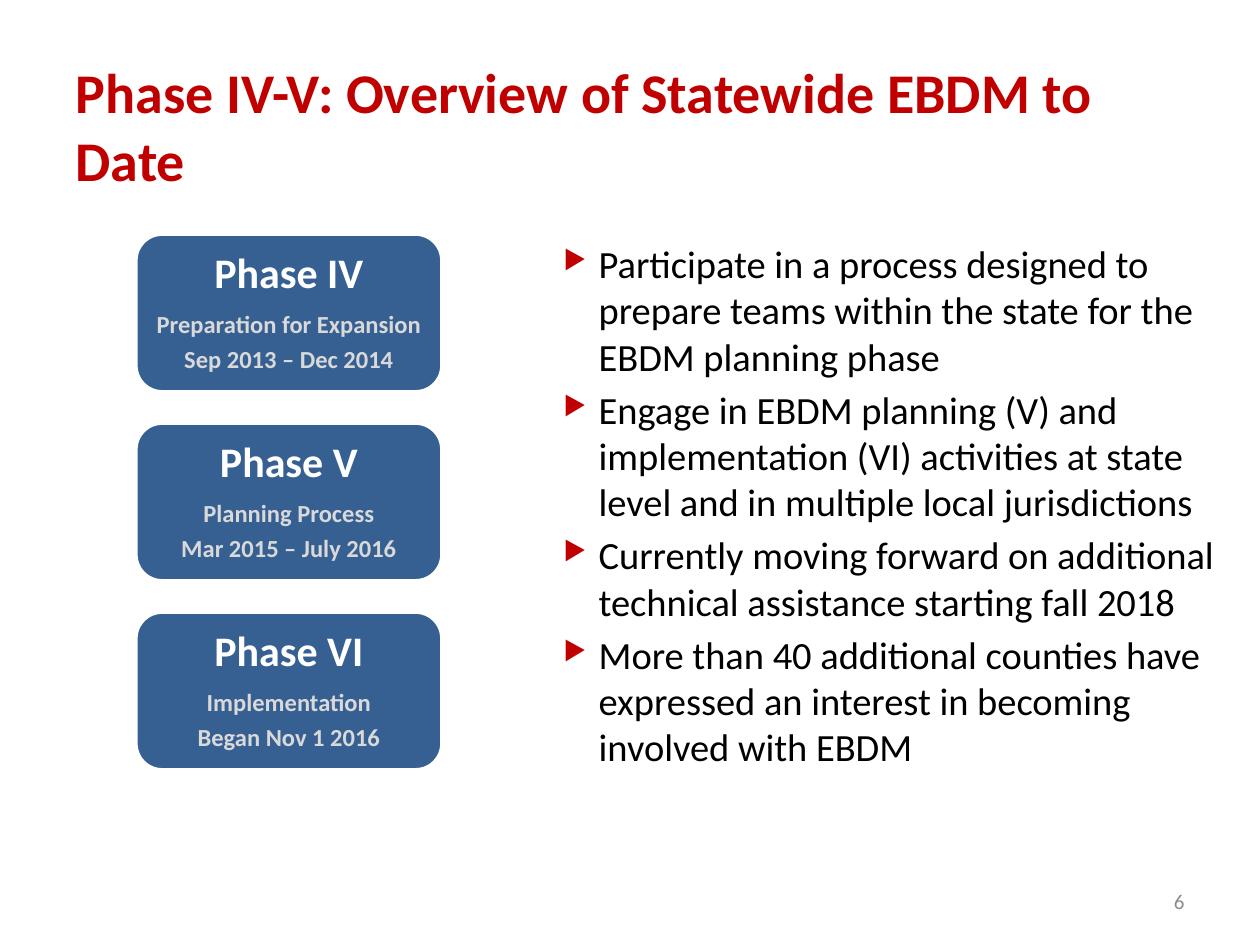
from lxml import etree
from pptx import Presentation
from pptx.dml.color import RGBColor
from pptx.enum.shapes import MSO_SHAPE
from pptx.enum.text import MSO_ANCHOR, MSO_AUTO_SIZE, PP_ALIGN
from pptx.oxml.ns import qn
from pptx.util import Cm, Pt

ROUNDED = MSO_SHAPE.ROUNDED_RECTANGLE
TOP, MIDDLE = MSO_ANCHOR.TOP, MSO_ANCHOR.MIDDLE
LEFT, CENTER, RIGHT = PP_ALIGN.LEFT, PP_ALIGN.CENTER, PP_ALIGN.RIGHT
NO_FIT = MSO_AUTO_SIZE.NONE
TITLE_ONLY = 5

COLOURS = {
    "red": "C00000",
    "blue": "376092",
    "white": "FFFFFF",
    "light": "D9D9D9",
    "black": "000000",
    "grey": "8C8C8C",
}
PHASES = [
    ("Phase IV", "Preparation for Expansion", "Sep 2013 – Dec 2014"),
    ("Phase V", "Planning Process", "Mar 2015 – July 2016"),
    ("Phase VI", "Implementation", "Began Nov 1 2016"),
]
ACTIVITIES = [
    "Participate in a process designed to prepare teams within the state for the EBDM planning phase",
    "Engage in EBDM planning (V) and implementation (VI) activities at state level and in multiple local jurisdictions",
    "Currently moving forward on additional technical assistance starting fall 2018",
    "More than 40 additional counties have expressed an interest in becoming involved with EBDM",
]
CARD_TOP, CARD_PITCH = 4.72, 3.81


class PhaseSlide:
    """Holds the style and the current slide, and adds each kind of element."""

    font = "Calibri"

    def __init__(self, slide):
        self.slide = slide

    def colour(self, name):
        return RGBColor.from_string(COLOURS[name])

    def frame(self, shape, anchor):
        frame = shape.text_frame
        settings = {"word_wrap": True, "auto_size": NO_FIT, "vertical_anchor": anchor}
        for key, value in settings.items():
            setattr(frame, key, value)
        return frame

    def add_text(self, paragraph, text, size, colour, bold=False, **layout):
        for key, value in layout.items():
            setattr(paragraph, key, value)
        run = paragraph.add_run()
        run.text = text
        settings = {"name": self.font, "size": Pt(size), "bold": bold}
        for key, value in settings.items():
            setattr(run.font, key, value)
        run.font.color.rgb = self.colour(colour)

    def paragraphs(self, frame, count):
        return [frame.paragraphs[0]] + [frame.add_paragraph() for _ in range(count - 1)]

    def title(self, text, left, top, width, height):
        title = self.slide.shapes.title
        box = {"left": left, "top": top, "width": width, "height": height}
        for key, value in box.items():
            setattr(title, key, Cm(value))
        frame = self.frame(title, TOP)
        self.add_text(frame.paragraphs[0], text, 32, "red", True, alignment=LEFT)

    def textbox(self, box, anchor):
        return self.frame(self.slide.shapes.add_textbox(*map(Cm, box)), anchor)

    def bullet(self, paragraph):
        properties = paragraph._p.get_or_add_pPr()
        properties.set("marL", str(Cm(1.02)))
        properties.set("indent", str(Cm(-0.71)))
        bullet_colour = etree.SubElement(properties, qn("a:buClr"))
        etree.SubElement(bullet_colour, qn("a:srgbClr"), val=COLOURS["red"])
        etree.SubElement(properties, qn("a:buSzPct"), val="68000")
        etree.SubElement(properties, qn("a:buChar"), char="▶")

    def bullets(self, items, *box):
        frame = self.textbox(box, TOP)
        for index, paragraph in enumerate(self.paragraphs(frame, len(items))):
            self.bullet(paragraph)
            gap = Pt(4) if index else None
            self.add_text(paragraph, items[index], 22, "black", space_before=gap)

    def card(self, lines, *box):
        card = self.slide.shapes.add_shape(ROUNDED, *map(Cm, box))
        card.shadow.inherit = False
        card.fill.solid()
        card.fill.fore_color.rgb = self.colour("blue")
        card.line.color.rgb = self.colour("white")
        card.line.width = Pt(2)
        frame = self.frame(card, MIDDLE)
        frame.margin_left = frame.margin_right = Cm(0.15)
        for index, paragraph in enumerate(self.paragraphs(frame, len(lines))):
            size, colour = (14, "light") if index else (24, "white")
            self.add_text(paragraph, lines[index], size, colour, True, alignment=CENTER,
                          line_spacing=0.9, space_after=Pt(size * 0.35))

    def page_number(self, number, *box):
        frame = self.textbox(box, MIDDLE)
        self.add_text(frame.paragraphs[0], number, 12, "grey", alignment=RIGHT)


def main():
    presentation = Presentation()
    presentation.slide_width, presentation.slide_height = Cm(25.4), Cm(19.05)
    layout = presentation.slide_layouts[TITLE_ONLY]
    page = PhaseSlide(presentation.slides.add_slide(layout))
    page.title("Phase IV-V: Overview of Statewide EBDM to Date", 1.27, 1.04, 22.86, 2.46)
    page.bullets(ACTIVITIES, 10.8, 4.72, 14.17, 11.23)
    for row, phase in enumerate(PHASES):
        page.card(phase, 2.74, CARD_TOP + row * CARD_PITCH, 6.17, 3.18)
    page.page_number("6", 18.21, 17.65, 5.92, 1.02)
    presentation.save("out.pptx")


if __name__ == "__main__":
    main()
